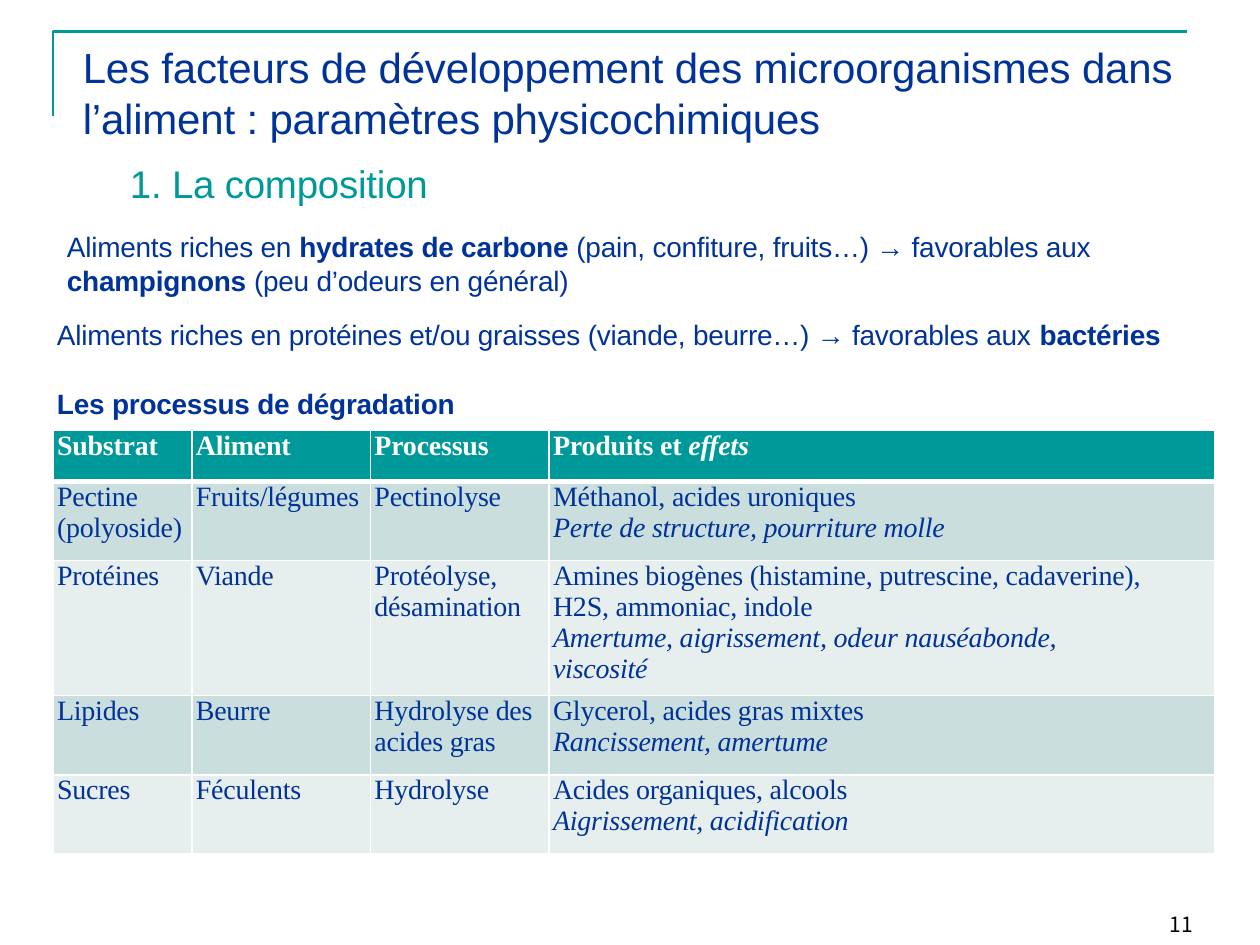
"""Build the slide on food composition and the growth of microorganisms."""
from lxml import etree
from pptx import Presentation
from pptx import util as u
from pptx.dml.color import RGBColor
from pptx.oxml import ns

NAVY, TEAL, WHITE, BLACK = "003399", "009999", "FFFFFF", "000000"


def paint(color_format, value):
    color_format.rgb = RGBColor.from_string(value)


def write(paragraph, marked, size, color, face, emphasis="bold", bold=None, indent=0):
    """Write text whose parts between asterisks get the emphasis."""
    paragraph._p.get_or_add_pPr().set("marL", str(u.Cm(indent)))
    for position, part in enumerate(marked.split("*")):
        if not part:
            continue
        run = paragraph.add_run()
        run.text = part
        run.font.size = u.Pt(size)
        run.font.name = face
        run.font.bold = bold
        paint(run.font.color, color)
        run.font._element.set("spc", "-10")
        if position % 2:
            setattr(run.font, emphasis, True)


deck = Presentation()
deck.slide_width, deck.slide_height = u.Cm(25.4), u.Cm(19.05)
slide = deck.slides.add_slide(deck.slide_layouts[6])

builder = slide.shapes.build_freeform(u.Cm(1.07), u.Cm(2.34))
builder.add_line_segments([(u.Cm(1.07), u.Cm(0.64)), (u.Cm(23.93), u.Cm(0.64))], close=False)
corner = builder.convert_to_shape()
corner.shadow.inherit = False
corner.fill.background()
paint(corner.line.color, TEAL)
corner.line.width = u.Pt(1.5)

frames = []
for left, top, width, height in [
    (1.42, 0.84, 22.53, 2.06),
    (1.12, 3.23, 22.8, 5.28),
    (23.5, 18.44, 0.6, 0.51),
]:
    frame = slide.shapes.add_textbox(u.Cm(left), u.Cm(top), u.Cm(width), u.Cm(height)).text_frame
    frame.word_wrap = True
    frame.margin_left = frame.margin_right = frame.margin_top = frame.margin_bottom = 0
    frames.append(frame)
title, body, page = frames

write(title.paragraphs[0],
      "Les facteurs de développement des microorganismes dans l’aliment : paramètres physicochimiques",
      24, NAVY, "Arial", indent=0.25)
write(page.paragraphs[0], "11", 12, BLACK, "Noto Sans CJK TC", indent=0.08)
page.paragraphs[0].line_spacing = u.Pt(12.6)

statements = [
    ("1. La composition", 22, TEAL, 1.5, 0),
    ("Aliments riches en *hydrates de carbone* (pain, confiture, fruits…) → favorables aux",
     16, NAVY, 0.23, 13.4),
    ("*champignons* (peu d’odeurs en général)", 16, NAVY, 0.23, 0),
    ("Aliments riches en protéines et/ou graisses (viande, beurre…) → favorables aux *bactéries*",
     16, NAVY, 0.03, 11.9),
    ("*Les processus de dégradation*", 16, NAVY, 0.03, 20),
]
for index, (statement, size, color, indent, gap) in enumerate(statements):
    paragraph = body.add_paragraph() if index else body.paragraphs[0]
    write(paragraph, statement, size, color, "Arial", indent=indent)
    if gap:
        paragraph.space_before = u.Pt(gap)

processes = [
    ["Substrat", "Aliment", "Processus", "Produits et *effets*"],
    ["Pectine (polyoside)", "Fruits/légumes", "Pectinolyse",
     "Méthanol, acides uroniques\n*Perte de structure, pourriture molle*"],
    ["Protéines", "Viande", "Protéolyse, désamination",
     "Amines biogènes (histamine, putrescine, cadaverine), H2S, ammoniac, indole\n"
     "*Amertume, aigrissement, odeur nauséabonde, viscosité*"],
    ["Lipides", "Beurre", "Hydrolyse des acides gras",
     "Glycerol, acides gras mixtes\n*Rancissement, amertume*"],
    ["Sucres", "Féculents", "Hydrolyse",
     "Acides organiques, alcools\n*Aigrissement, acidification*"],
]
widths = [2.8, 3.6, 3.6, 13.41]
heights = [1.03, 1.6, 2.72, 1.6, 1.6]
table = slide.shapes.add_table(len(heights), len(widths), u.Cm(1.07), u.Cm(8.67),
                               u.Cm(sum(widths)), u.Cm(sum(heights))).table
for column, width in zip(table.columns, widths):
    column.width = u.Cm(width)
for row, height in zip(table.rows, heights):
    row.height = u.Cm(height)

for r, entries in enumerate(processes):
    header = r == 0
    shade = TEAL if header else ("CADEDE" if r % 2 else "E7EEEE")
    for c, entry in enumerate(entries):
        cell = table.cell(r, c)
        cell.margin_left = u.Cm(0.08)
        cell.margin_top = cell.margin_bottom = 0
        cell.margin_right = u.Cm(1.2 if c == 3 else 0)
        for index, line in enumerate(entry.split("\n")):
            paragraph = cell.text_frame.add_paragraph() if index else cell.text_frame.paragraphs[0]
            write(paragraph, line, 16, WHITE if header else NAVY, "Times New Roman",
                  emphasis="italic", bold=header)
        properties = cell._tc.get_or_add_tcPr()
        for side in ("lnL", "lnR", "lnT", "lnB"):
            thick = (r, side) in [(0, "lnB"), (1, "lnT")]
            border = etree.SubElement(properties, ns.qn(f"a:{side}"), w=str(u.Pt(3 if thick else 1)))
            paper = etree.SubElement(border, ns.qn("a:solidFill"))
            etree.SubElement(paper, ns.qn("a:srgbClr"), val=WHITE)
        cell.fill.solid()
        paint(cell.fill.fore_color, shade)

deck.save("out.pptx")
